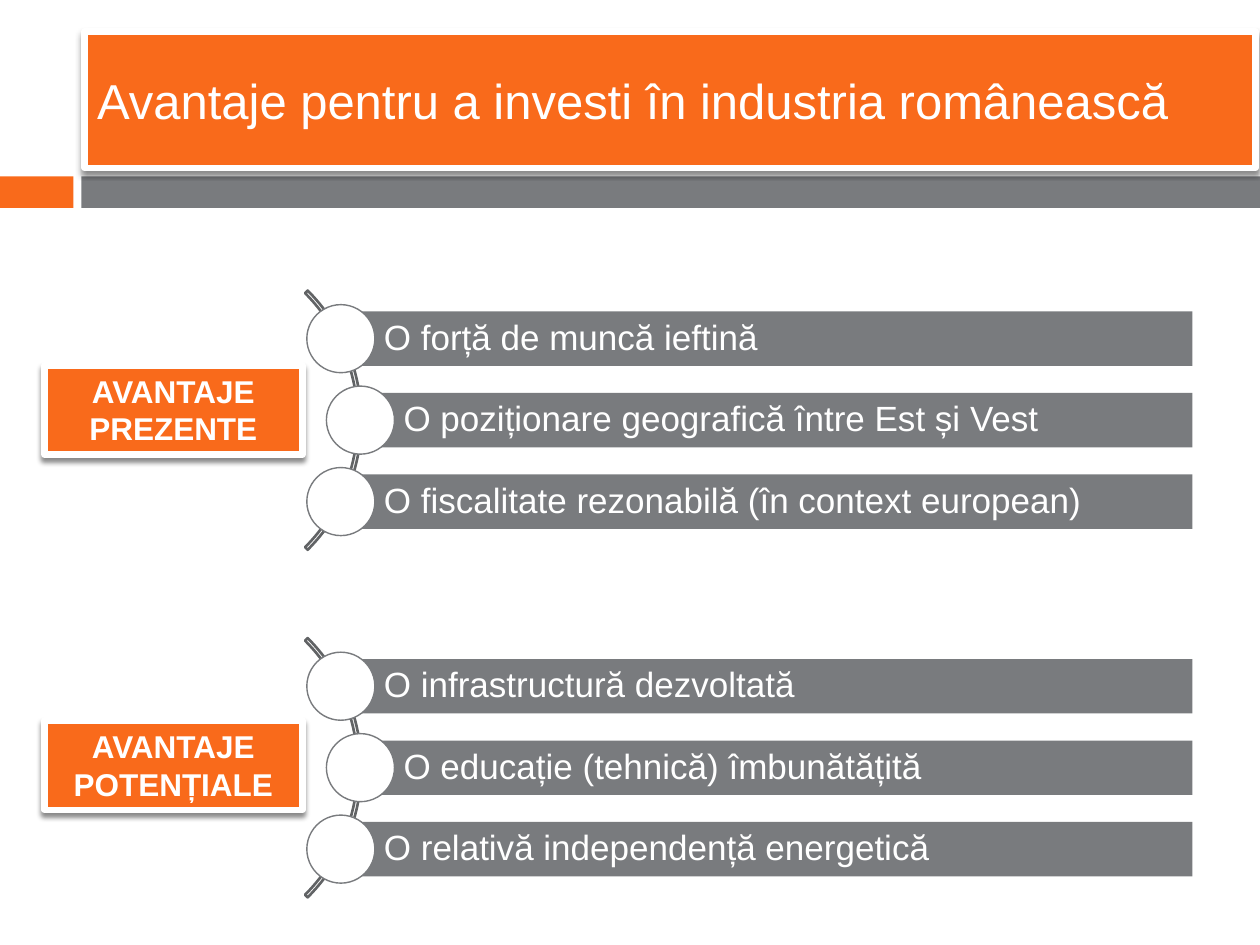
"""Builds a slide on the present and potential advantages of investing in Romanian industry."""
from lxml import etree
from pptx import Presentation
from pptx.dml.color import RGBColor
from pptx.enum.shapes import MSO_SHAPE
from pptx.enum.text import MSO_ANCHOR, MSO_AUTO_SIZE, PP_ALIGN
from pptx.oxml.ns import qn
from pptx.util import Pt

RECT, OVAL, ARC = MSO_SHAPE.RECTANGLE, MSO_SHAPE.OVAL, MSO_SHAPE.BLOCK_ARC
TOP, MIDDLE = MSO_ANCHOR.TOP, MSO_ANCHOR.MIDDLE
LEFT, CENTER = PP_ALIGN.LEFT, PP_ALIGN.CENTER
NO_FIT, GROW = MSO_AUTO_SIZE.NONE, MSO_AUTO_SIZE.SHAPE_TO_FIT_TEXT

ORANGE, GRAY, DARK, WHITE = "F96A1B", "797B7E", "616365", "FFFFFF"

SECTIONS = [
    (240.1, 208.8, "AVANTAJE PREZENTE", [
        "O forță de muncă ieftină",
        "O poziționare geografică între Est și Vest",
        "O fiscalitate rezonabilă (în context european)"]),
    (438.7, 411.8, "AVANTAJE POTENȚIALE", [
        "O infrastructură dezvoltată",
        "O educație (tehnică) îmbunătățită",
        "O relativă independență energetică"]),
]


def color(value):
    return RGBColor.from_string(value)


class Deck:
    font = "Arial"
    bar_left, bar_right, bar_height, pitch = 194.8, 681.4, 31.1, 46.55
    indent, circle, arc = 11.2, 38.9, 209.5

    def __init__(self):
        self.prs = Presentation()
        self.prs.slide_width, self.prs.slide_height = Pt(720), Pt(540)
        self.s = self.prs.slides.add_slide(self.prs.slide_layouts[5])

    def style(self, sp, fill=None, line=None, width=0):
        sp.shadow.inherit = False
        if fill:
            sp.fill.solid()
            sp.fill.fore_color.rgb = color(fill)
        else:
            sp.fill.background()
        if line:
            sp.line.color.rgb = color(line)
            sp.line.width = Pt(width)
        else:
            sp.line.fill.background()

    def shape(self, shapes, kind, x, y, w, h, **look):
        sp = shapes.add_shape(kind, Pt(x), Pt(y), Pt(w), Pt(h))
        self.style(sp, **look)
        return sp

    def text(self, sp, text, size, align=LEFT, anchor=MIDDLE, bold=False, fit=NO_FIT):
        tf = sp.text_frame
        tf.text = text
        tf.word_wrap = True
        tf.auto_size = fit
        tf.vertical_anchor = anchor
        p = tf.paragraphs[0]
        p.alignment = align
        p.font.name, p.font.size, p.font.bold = self.font, Pt(size), bold
        p.font.color.rgb = color(WHITE)
        return tf

    def card(self, sp):
        self.style(sp, ORANGE, WHITE, 3.75)
        effects = sp.element.spPr.find(qn("a:effectLst"))
        shadow = etree.SubElement(effects, qn("a:outerShdw"), blurRad=str(Pt(3)),
                                  dist=str(Pt(2.4)), dir="5400000", rotWithShape="0")
        black = etree.SubElement(shadow, qn("a:srgbClr"), val="000000")
        etree.SubElement(black, qn("a:alpha"), val="45000")

    def bands(self):
        self.shape(self.s.shapes, RECT, 0, 100.8, 42, 18, fill=ORANGE)
        self.shape(self.s.shapes, RECT, 46.5, 100.8, 673.5, 18, fill=GRAY)

    def title(self, text):
        sp = self.s.shapes.title
        sp.left, sp.top, sp.width, sp.height = Pt(48.3), Pt(18), Pt(669), Pt(78)
        self.card(sp)
        self.text(sp, text, 28)
        sp.element.getparent().append(sp.element)

    def label(self, y, text):
        sp = self.shape(self.s.shapes, RECT, 25.3, y, 147.5, 51)
        self.card(sp)
        self.text(sp, text, 18, CENTER, TOP, True, GROW)

    def curved_list(self, middle, items):
        shapes = self.s.shapes.add_group_shape().shapes
        arc = self.shape(shapes, ARC, -3, middle - self.arc / 2, self.arc, self.arc,
                         line=DARK, width=1.5)
        for i, value in enumerate((189, 27, 0.01)):
            arc.adjustments[i] = value
        for i, item in enumerate(items):
            x = self.bar_left + self.indent * (i % 2)
            y = middle + (i - 1) * self.pitch
            bar = self.shape(shapes, RECT, x, y - self.bar_height / 2,
                             self.bar_right - x, self.bar_height, fill=GRAY)
            tf = self.text(bar, item, 20)
            tf.margin_left = Pt(24.6)
            tf.margin_right = tf.margin_top = tf.margin_bottom = Pt(4)
            tf.paragraphs[0].line_spacing = 0.9
            self.shape(shapes, OVAL, x - self.circle / 2, y - self.circle / 2,
                       self.circle, self.circle, fill=WHITE, line=GRAY, width=0.79)


def main():
    deck = Deck()
    deck.bands()
    deck.title("Avantaje pentru a investi în industria românească")
    for middle, label_top, label, items in SECTIONS:
        deck.curved_list(middle, items)
        deck.label(label_top, label)
    deck.prs.save("out.pptx")


if __name__ == "__main__":
    main()
